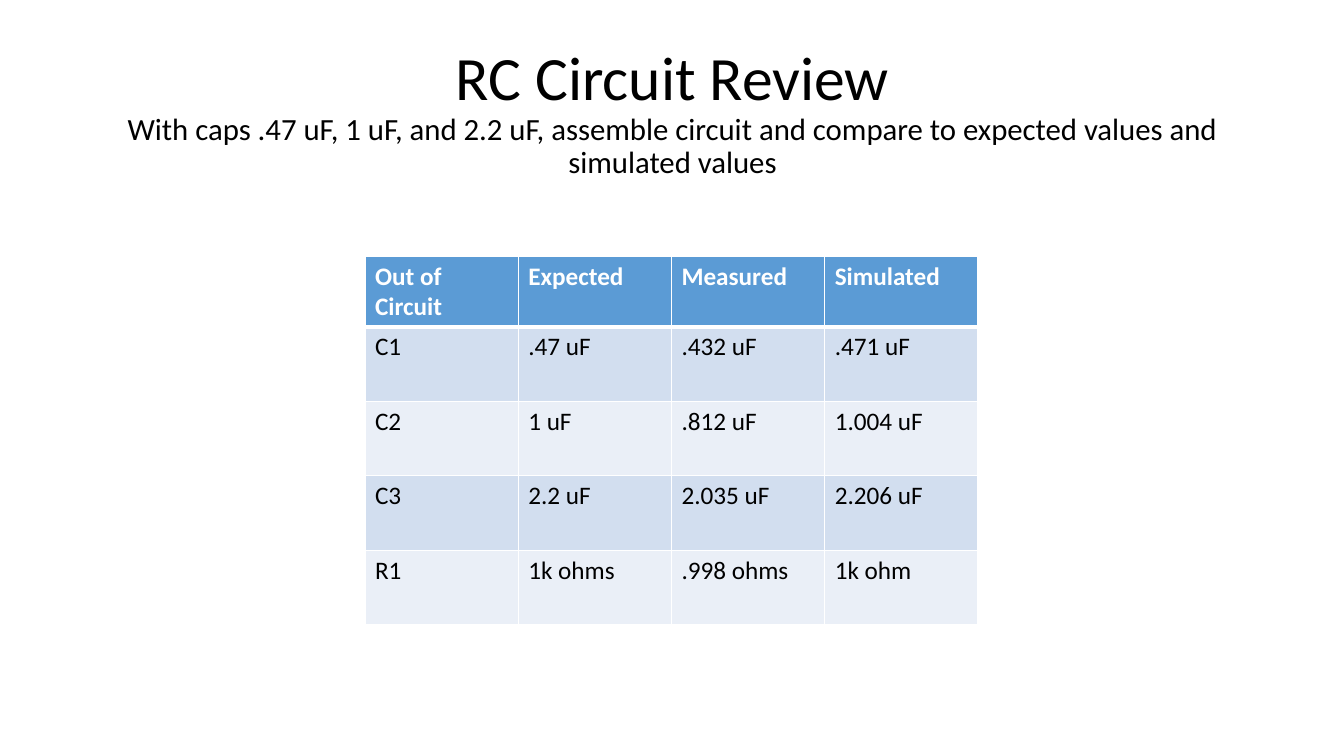
import pptx
import pptx.util
import pptx.dml.color
import pptx.enum.text
import pptx.oxml
import pptx.oxml.ns
from pptx.util import Inches

FONT = "Calibri"
COLORS = {"head": "5B9BD5", "dark": "D2DEEF", "light": "EAEFF7",
          "white": "FFFFFF", "black": "000000"}


def style(font, size, color, bold=False):
    font.name = FONT
    font.size = pptx.util.Pt(size)
    font.bold = bold
    font.color.rgb = pptx.dml.color.RGBColor.from_string(COLORS[color])


def border(cell, side, width):
    cell._tc.get_or_add_tcPr().append(pptx.oxml.parse_xml(
        f'<a:{side} {pptx.oxml.ns.nsdecls("a")} w="{pptx.util.Pt(width)}">'
        f'<a:solidFill><a:srgbClr val="{COLORS["white"]}"/></a:solidFill></a:{side}>'))


deck = pptx.Presentation()
deck.slide_width, deck.slide_height = Inches(13.33), Inches(7.5)
slide = deck.slides.add_slide(deck.slide_layouts[6])

# Title with its task line
box = slide.shapes.add_textbox(Inches(0.92), Inches(0.4), Inches(11.5), Inches(1.45))
frame = box.text_frame
frame.word_wrap = True
frame.vertical_anchor = pptx.enum.text.MSO_ANCHOR.MIDDLE
title = frame.paragraphs[0]
title.alignment = pptx.enum.text.PP_ALIGN.CENTER
title.line_spacing = 0.9
head = title.add_run()
head.text = "RC Circuit Review"
style(head.font, 44, "black")
title.add_line_break()
task = title.add_run()
task.text = ("With caps .47 uF, 1 uF, and 2.2 uF, assemble circuit and compare "
             "to expected values and simulated values")
style(task.font, 22, "black")

# Table of part values
rows = [
    ["Out of Circuit", "Expected", "Measured", "Simulated"],
    ["C1", ".47 uF", ".432 uF", ".471 uF"],
    ["C2", "1 uF", ".812 uF", "1.004 uF"],
    ["C3", "2.2 uF", "2.035 uF", "2.206 uF"],
    ["R1", "1k ohms", ".998 ohms", "1k ohm"],
]
table = slide.shapes.add_table(len(rows), len(rows[0]), Inches(3.62), Inches(2.54),
                               Inches(6.09), Inches(3.55)).table
for col in table.columns:
    col.width = Inches(1.52)
for r, texts in enumerate(rows):
    table.rows[r].height = Inches(0.74 if r else 0.59)
    fill = "head" if r == 0 else "dark" if r % 2 else "light"
    for c, text in enumerate(texts):
        cell = table.cell(r, c)
        cell.text = text
        style(cell.text_frame.paragraphs[0].font, 18,
              "black" if r else "white", bold=r == 0)
        # Thick rule between the header and the body
        for side, width in (("lnL", 1), ("lnR", 1),
                            ("lnT", 3 if r == 1 else 1), ("lnB", 3 if r == 0 else 1)):
            border(cell, side, width)
        cell.fill.solid()
        cell.fill.fore_color.rgb = pptx.dml.color.RGBColor.from_string(COLORS[fill])

deck.save("out.pptx")
